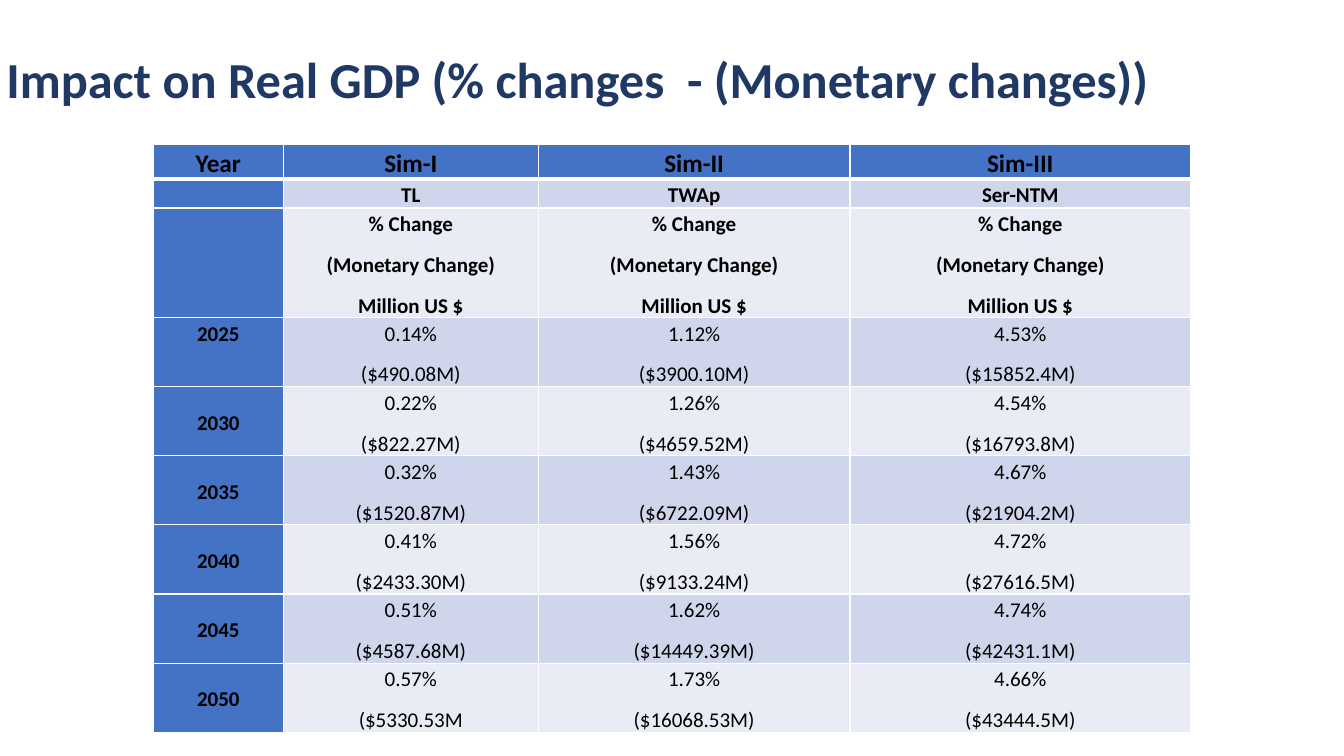
from lxml import etree
from pptx import Presentation
from pptx.dml.color import RGBColor
from pptx.enum import text
from pptx.oxml.ns import qn
from pptx.util import Inches, Pt

BLUE, BAND, LIGHT = "4472C4", "CFD5EA", "E9EBF5"
SUBHEAD = "% Change\n(Monetary Change)\nMillion US $"
ROWS = [
    ["Year", "Sim-I", "Sim-II", "Sim-III"],
    ["", "TL", "TWAp", "Ser-NTM"],
    ["", SUBHEAD, SUBHEAD, SUBHEAD],
    ["2025", "0.14%\n($490.08M)", "1.12%\n($3900.10M)", "4.53%\n($15852.4M)"],
    ["2030", "0.22%\n($822.27M)", "1.26%\n($4659.52M)", "4.54%\n($16793.8M)"],
    ["2035", "0.32%\n($1520.87M)", "1.43%\n($6722.09M)", "4.67%\n($21904.2M)"],
    ["2040", "0.41%\n($2433.30M)", "1.56%\n($9133.24M)", "4.72%\n($27616.5M)"],
    ["2045", "0.51%\n($4587.68M)", "1.62%\n($14449.39M)", "4.74%\n($42431.1M)"],
    ["2050", "0.57%\n($5330.53M", "1.73%\n($16068.53M)", "4.66%\n($43444.5M)"],
]
COL_WIDTHS = [1.29, 2.53, 3.09, 3.38]
ROW_HEIGHTS = [0.23, 0.23, 0.83] + [0.53] * 6


def format_paragraph(p, size, color, bold, spacing):
    p.alignment = text.PP_ALIGN.CENTER
    p.line_spacing = spacing
    for r in p.runs:
        r.font.name = "Calibri"
        r.font.size = Pt(size)
        r.font.bold = bold
        r.font.color.rgb = RGBColor.from_string(color)


def add_border(cell, side, width):
    """Draw one white edge of a cell; side is L, R, T or B."""
    ln = etree.SubElement(cell._tc.get_or_add_tcPr(), qn(f"a:ln{side}"), w=str(Pt(width)))
    fill = etree.SubElement(ln, qn("a:solidFill"))
    etree.SubElement(fill, qn("a:srgbClr"), val="FFFFFF")


prs = Presentation()
prs.slide_width, prs.slide_height = Inches(13.33), Inches(7.5)
s = prs.slides.add_slide(prs.slide_layouts[6])

title = s.shapes.add_textbox(Inches(-0.23), Inches(0.2), Inches(11.92), Inches(1.24))
tf = title.text_frame
tf.word_wrap = True
tf.vertical_anchor = text.MSO_ANCHOR.MIDDLE
tf.text = "Impact on Real GDP (% changes  - (Monetary changes))"
format_paragraph(tf.paragraphs[0], 36, "203864", True, 0.9)

table = s.shapes.add_table(len(ROWS), len(COL_WIDTHS), Inches(1.52), Inches(1.43),
                           Inches(sum(COL_WIDTHS)), Inches(sum(ROW_HEIGHTS))).table
for column, width in zip(table.columns, COL_WIDTHS):
    column.width = Inches(width)

for i, (values, height) in enumerate(zip(ROWS, ROW_HEIGHTS)):
    table.rows[i].height = Inches(height)
    for j, value in enumerate(values):
        cell = table.cell(i, j)
        cell.margin_left = cell.margin_right = Inches(0.04)
        cell.margin_top = cell.margin_bottom = 0
        for side in "LRTB":
            under_header = (i, side) in [(0, "B"), (1, "T")]
            add_border(cell, side, 3 if under_header else 1)
        cell.fill.solid()
        color = BLUE if i == 0 or j == 0 else BAND if i % 2 else LIGHT
        cell.fill.fore_color.rgb = RGBColor.from_string(color)

        if value == "2025" or (j > 0 and i not in (0, 2)):
            cell.vertical_anchor = text.MSO_ANCHOR.TOP
        else:
            cell.vertical_anchor = text.MSO_ANCHOR.MIDDLE
        cell.text_frame.text = value
        for p in cell.text_frame.paragraphs:
            format_paragraph(p, 18 if i == 0 else 15, "000000", i < 3 or j == 0, 1.15)
            p.space_after = Pt(8)
            if not value:  # keeps an empty cell from stretching its row
                etree.SubElement(p._p, qn("a:endParaRPr"), sz="1500")

prs.save("out.pptx")
